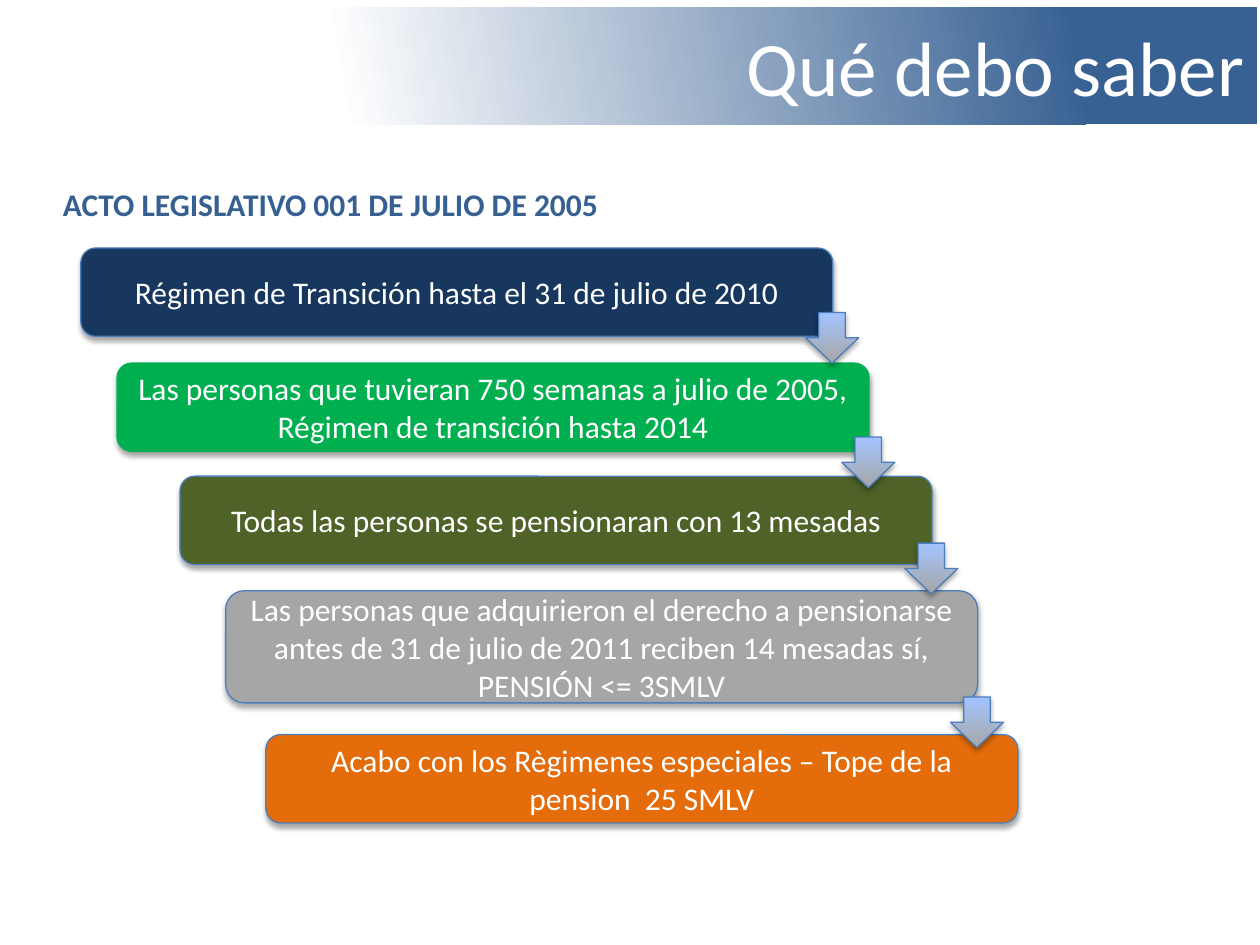
"""Build the slide on what to know about the 2005 pension act."""
from lxml import etree
from pptx import Presentation
from pptx.dml.color import RGBColor
from pptx.enum.shapes import MSO_SHAPE
from pptx.enum.text import MSO_ANCHOR, MSO_AUTO_SIZE, PP_ALIGN
from pptx.oxml.ns import qn
from pptx.util import Cm, Pt

ROUND, ARROW = MSO_SHAPE.ROUNDED_RECTANGLE, MSO_SHAPE.DOWN_ARROW
RIGHT, CENTER, JUSTIFY = PP_ALIGN.RIGHT, PP_ALIGN.CENTER, PP_ALIGN.JUSTIFY
MIDDLE, TOP = MSO_ANCHOR.MIDDLE, MSO_ANCHOR.TOP
FIXED, GROW = MSO_AUTO_SIZE.NONE, MSO_AUTO_SIZE.SHAPE_TO_FIT_TEXT
BLUE = "4B7EBC"
WIDE = 15.16
STEPS = [
    (1.63, 5, 1.78, "17375E", BLUE, "Régimen de Transición hasta el 31 de julio de 2010"),
    (2.36, 7.32, 1.78, "00B050", "00B050",
     "Las personas que tuvieran 750 semanas a julio de 2005, Régimen de transición hasta 2014"),
    (3.63, 9.6, 1.78, "4F6228", BLUE, "Todas las personas se pensionaran con 13 mesadas"),
    (4.55, 11.91, 2.26, "A6A6A6", BLUE,
     "Las personas que adquirieron el derecho a pensionarse antes de 31 de julio de 2011 "
     "reciben 14 mesadas sí, PENSIÓN <= 3SMLV"),
    (5.36, 14.81, 1.78, "E46C0A", BLUE,
     "Acabo con los Règimenes especiales – Tope de la pension  25 SMLV"),
]
DROPS = [6.3, 8.81, 10.95, 14.05]


def rgb(code):
    """Turn a hex string into a colour."""
    return RGBColor.from_string(code)


class Deck:
    """Hold the style and the current slide."""

    font = "Calibri"
    size = 18

    def __init__(self):
        """Start a deck with one titled slide."""
        self.file = Presentation()
        self.file.slide_width, self.file.slide_height = Cm(25.4), Cm(19.05)
        self.slide = self.file.slides.add_slide(self.file.slide_layouts[5])

    def label(self, shape, text, color, size, align, anchor=MIDDLE, bold=False, fit=FIXED):
        """Put one styled paragraph into a shape."""
        frame = shape.text_frame
        frame.text = text
        frame.word_wrap, frame.auto_size = True, fit
        frame.vertical_anchor = anchor
        par = frame.paragraphs[0]
        par.alignment = align
        font = par.runs[0].font
        font.name, font.size, font.bold = self.font, Pt(size), bold
        font.color.rgb = rgb(color)

    def blend(self, shape, angle, stops):
        """Fill a shape with a two-stop gradient."""
        shape.fill.gradient()
        shape.fill.gradient_angle = angle
        for stop, (place, color) in zip(shape.fill.gradient_stops, stops):
            stop.position, stop.color.rgb = place, rgb(color)

    def title(self, text):
        """Set the title on its fading band."""
        band = self.slide.shapes.title
        band.left, band.top, band.width, band.height = Cm(5.08), Cm(0.15), Cm(20.27), Cm(2.36)
        self.blend(band, 190, [(0.18, "386193"), (0.91, "FFFFFF")])
        self.label(band, text, "FFFFFF", 44, RIGHT)

    def head(self, text):
        """Add the heading above the steps."""
        box = self.slide.shapes.add_textbox(Cm(1.02), Cm(3.61), Cm(23.6), Cm(1.02))
        self.label(box, text, "376092", self.size, JUSTIFY, TOP, True, GROW)

    def shape(self, kind, left, top, width, height, line):
        """Add an outlined shape with a soft shadow."""
        item = self.slide.shapes.add_shape(kind, Cm(left), Cm(top), Cm(width), Cm(height))
        item.line.color.rgb, item.line.width = rgb(line), Pt(0.75)
        item.shadow.inherit = False
        glow = etree.SubElement(
            item._element.spPr.find(qn("a:effectLst")), qn("a:outerShdw"),
            blurRad=str(Pt(3.1)), dist=str(Pt(1.8)), dir="5400000", rotWithShape="0")
        tone = etree.SubElement(glow, qn("a:srgbClr"), val="000000")
        etree.SubElement(tone, qn("a:alpha"), val="35000")
        return item

    def step(self, left, top, height, fill, line, text):
        """Add one step of the stair."""
        box = self.shape(ROUND, left, top, WIDE, height, line)
        box.fill.solid()
        box.fill.fore_color.rgb = rgb(fill)
        self.label(box, text, "FFFFFF", self.size, CENTER)

    def arrow(self, left, top):
        """Add an arrow down to the next step."""
        item = self.shape(ARROW, left, top, 1.07, 1.02, BLUE)
        self.blend(item, 90, [(0, "A6A6A6"), (1, "A4C4FF")])


def main():
    """Draw and save the slide."""
    deck = Deck()
    deck.title("Qué debo saber")
    deck.head("ACTO LEGISLATIVO 001 DE JULIO DE 2005")
    for step in STEPS:
        deck.step(*step)
    for step, top in zip(STEPS, DROPS):
        deck.arrow(step[0] + WIDE - 0.55, top)
    deck.file.save("out.pptx")


if __name__ == "__main__":
    main()
